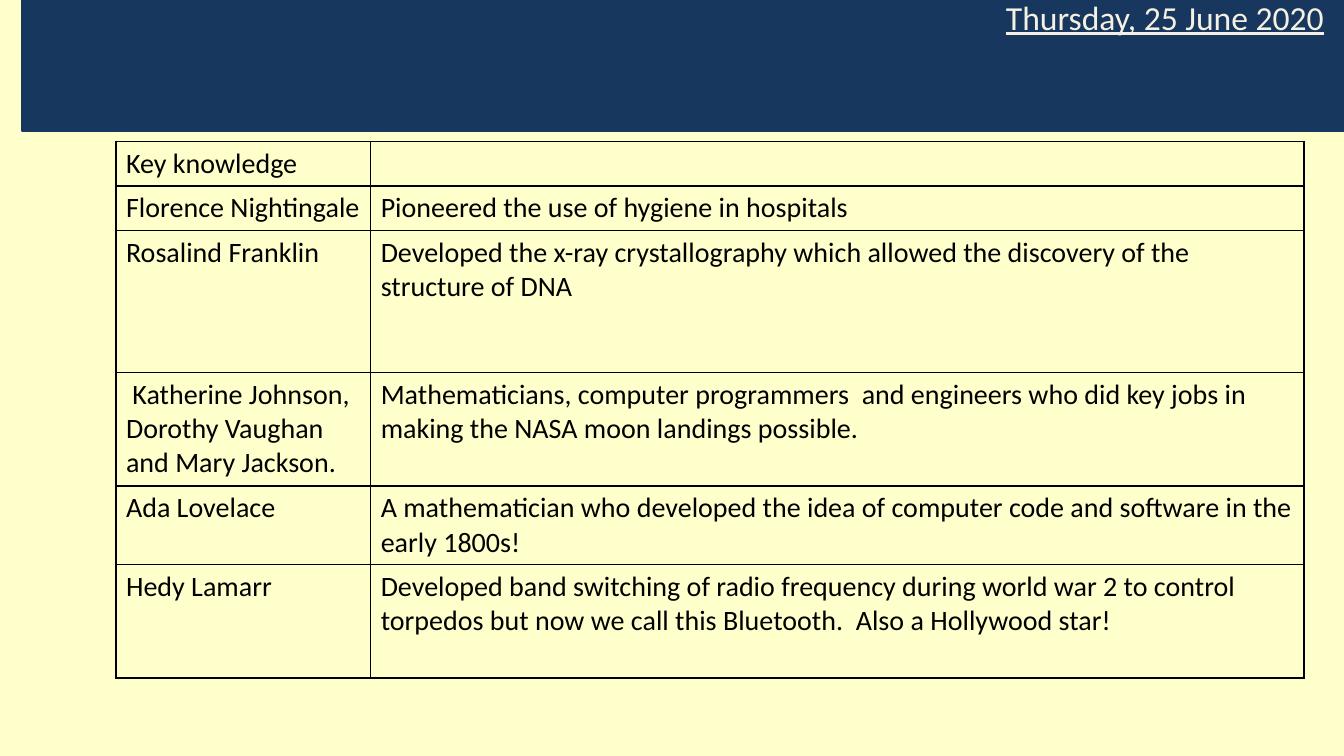
"""Build the key knowledge slide about women in science."""
from typing import NamedTuple

from lxml import etree
from pptx import Presentation
from pptx import util as u
from pptx.dml.color import RGBColor
from pptx.enum import shapes, text
from pptx.oxml.ns import qn

WIDTH, HEIGHT = u.Inches(13.33), u.Inches(7.5)
CREAM, NAVY, IVORY, BLACK = "FFFFCC", "17375E", "F4F1E3", "000000"
FONT = "Calibri"


class Area(NamedTuple):
    left: float
    top: float
    width: float
    height: float


class Entry(NamedTuple):
    name: str
    achievement: str
    height: float


BANNER = Area(1.65, -0.67, 98.35, 18)
DATE = Area(52.36, -1.07, 46.89, 5.33)
TABLE_LEFT, TABLE_TOP = 8.63, 18.7
COLUMNS = (18.95, 69.45)
ENTRIES = (
    Entry("Key knowledge", "", 5.9),
    Entry("Florence Nightingale", "Pioneered the use of hygiene in hospitals", 5.9),
    Entry("Rosalind Franklin",
          "Developed the x-ray crystallography which allowed the discovery of the "
          "structure of DNA", 18.8),
    Entry(" Katherine Johnson, Dorothy Vaughan and Mary Jackson.",
          "Mathematicians, computer programmers  and engineers who did key jobs in "
          "making the NASA moon landings possible.", 15),
    Entry("Ada Lovelace",
          "A mathematician who developed the idea of computer code and software in "
          "the early 1800s!", 10.4),
    Entry("Hedy Lamarr",
          "Developed band switching of radio frequency during world war 2 to control "
          "torpedos but now we call this Bluetooth.  Also a Hollywood star!", 15),
)


def colour(value: str) -> RGBColor:
    return RGBColor.from_string(value)


def across(percent: float) -> int:
    return int(WIDTH * percent / 100)


def down(percent: float) -> int:
    return int(HEIGHT * percent / 100)


def place(area: Area) -> tuple[int, int, int, int]:
    return across(area.left), down(area.top), across(area.width), down(area.height)


def style(para, size: float, ink: str, underline: bool = False) -> None:
    for span in para.runs:
        span.font.name = FONT
        span.font.size = u.Pt(size)
        span.font.color.rgb = colour(ink)
        span.font.underline = underline


def draw_banner(page) -> None:
    banner = page.shapes.add_shape(shapes.MSO_SHAPE.RECTANGLE, *place(BANNER))
    banner.shadow.inherit = False
    banner.fill.solid()
    banner.fill.fore_color.rgb = colour(NAVY)
    banner.line.color.rgb = colour(NAVY)
    banner.line.width = u.Pt(1)


def draw_date(page) -> None:
    box = page.shapes.add_textbox(*place(DATE))
    box.text_frame.word_wrap = True
    para = box.text_frame.paragraphs[0]
    para.text = "Thursday, 25 June 2020"
    para.alignment = text.PP_ALIGN.RIGHT
    style(para, 24, IVORY, underline=True)


def outline(cell) -> None:
    properties = cell._tc.get_or_add_tcPr()
    for side in ("a:lnL", "a:lnR", "a:lnT", "a:lnB"):
        border = etree.SubElement(properties, qn(side), w=str(u.Pt(1)))
        fill = etree.SubElement(border, qn("a:solidFill"))
        etree.SubElement(fill, qn("a:srgbClr"), val=BLACK)


def draw_table(page) -> None:
    area = Area(TABLE_LEFT, TABLE_TOP, sum(COLUMNS),
                sum(entry.height for entry in ENTRIES))
    table = page.shapes.add_table(len(ENTRIES), len(COLUMNS), *place(area)).table
    table.first_row = table.horz_banding = False
    for column, width in zip(table.columns, COLUMNS):
        column.width = across(width)
    for row, entry in zip(table.rows, ENTRIES):
        row.height = down(entry.height)
        for cell, words in zip(row.cells, (entry.name, entry.achievement)):
            outline(cell)
            cell.fill.background()
            para = cell.text_frame.paragraphs[0]
            if words:
                para.text = words
                style(para, 20, BLACK)


def main() -> None:
    deck = Presentation()
    deck.slide_width, deck.slide_height = WIDTH, HEIGHT
    page = deck.slides.add_slide(deck.slide_layouts[6])
    page.background.fill.solid()
    page.background.fill.fore_color.rgb = colour(CREAM)
    draw_banner(page)
    draw_date(page)
    draw_table(page)
    deck.save("out.pptx")


if __name__ == "__main__":
    main()
